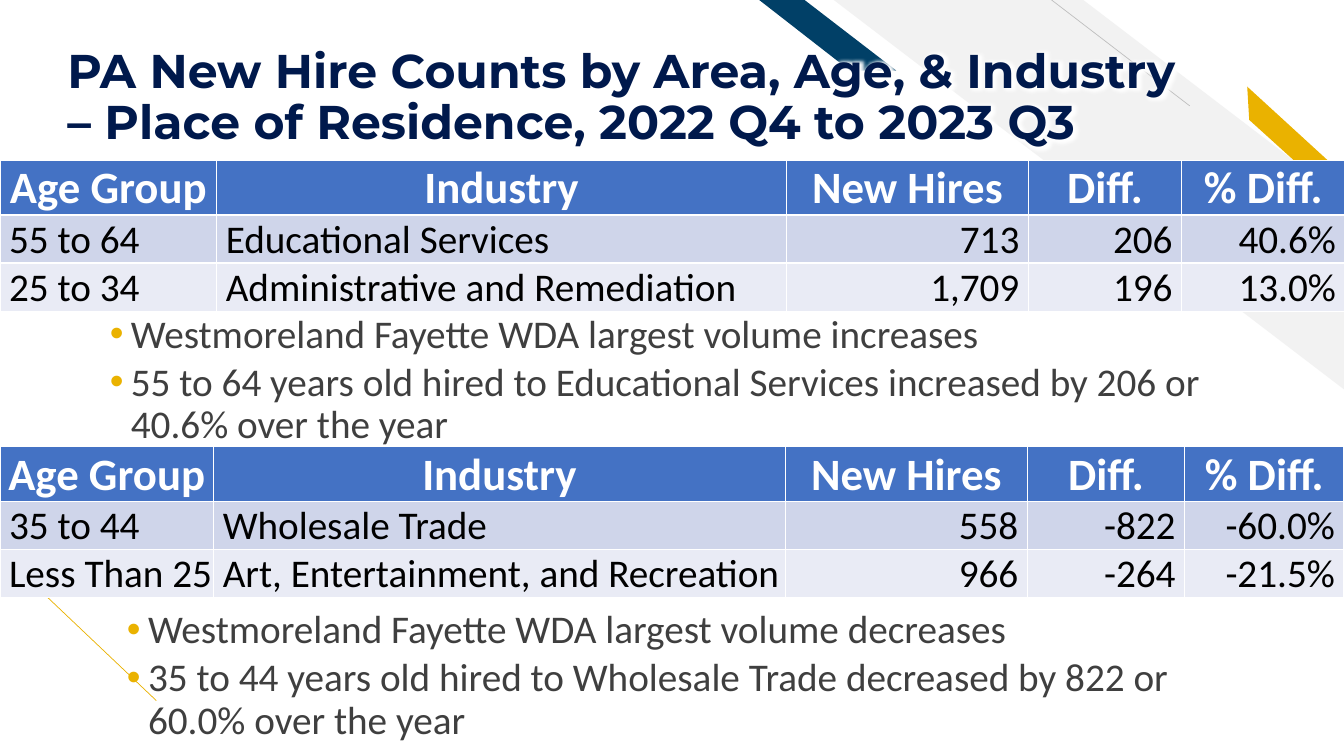
from dataclasses import dataclass

from lxml.etree import SubElement
from pptx import Presentation
from pptx.dml.color import RGBColor
from pptx.enum.shapes import MSO_CONNECTOR, MSO_SHAPE
from pptx.enum.text import MSO_ANCHOR, PP_ALIGN
from pptx.oxml.ns import qn
from pptx.util import Inches, Pt


@dataclass(frozen=True)
class Theme:
    """Colours, fonts and type sizes of the slide."""
    navy: str = "00194C"
    blue: str = "014067"
    gold: str = "EAB200"
    pale: str = "F2F2F2"
    grey: str = "BFBFBF"
    body: str = "3F3F3F"
    white: str = "FFFFFF"
    black: str = "000000"
    header: str = "4472C4"
    bands: tuple = ("CFD5EA", "E9EBF5")
    title_font: str = "Montserrat"
    body_font: str = "Calibri"
    title_size: float = 33.8
    header_size: float = 32
    body_size: float = 28


THEME = Theme()
HEADINGS = ("Age Group", "Industry", "New Hires", "Diff.", "% Diff.")
ROW_HEIGHTS = (0.47, 0.42, 0.43)


def rgb(color):
    """Turn a hex string into a colour."""
    return RGBColor.from_string(color)


def style_font(font, name, size, color, bold=False):
    """Set the typeface, size, colour and weight of a font."""
    font.name, font.size, font.bold = name, Pt(size), bold
    font.color.rgb = rgb(color)


def set_margins(target, left, top, right, bottom):
    """Set the inner margins of a cell or text frame."""
    target.margin_left, target.margin_top = Inches(left), Inches(top)
    target.margin_right, target.margin_bottom = Inches(right), Inches(bottom)


def paint(shape, color):
    """Give a shape a plain fill without line or shadow."""
    shape.shadow.inherit = False
    shape.fill.solid()
    shape.fill.fore_color.rgb = rgb(color)
    shape.line.fill.background()


def add_polygon(slide, left, top, points, color):
    """Draw a filled outline from points relative to its corner."""
    corners = [(Inches(left + x), Inches(top + y)) for x, y in points]
    builder = slide.shapes.build_freeform(*corners[0], scale=1.0)
    builder.add_line_segments(corners[1:], close=True)
    paint(builder.convert_to_shape(), color)


def add_hairline(slide, start, end, color):
    """Draw a thin straight line."""
    line = slide.shapes.add_connector(
        MSO_CONNECTOR.STRAIGHT, *map(Inches, start + end))
    line.line.color.rgb = rgb(color)
    line.line.width = Pt(0.5)
    SubElement(line._element.spPr, qn("a:effectLst"))


def add_corner_decoration(slide, left, top, width, height):
    """Place the diagonal bands of the upper right corner."""
    stripe = slide.shapes.add_shape(
        MSO_SHAPE.DIAGONAL_STRIPE, *map(Inches, (left, top, width, height)))
    stripe.adjustments[0] = 0.512
    stripe._element.spPr.xfrm.set("flipH", "1")
    paint(stripe, THEME.pale)
    add_hairline(slide, (left + 3.53, top + 1.05), (left + 2.16, top), THEME.grey)
    add_polygon(slide, left + 4.1, top + 0.86,
                ((0.98, 1.2), (0.95, 0.87), (0, 0), (0.02, 0.33)), THEME.gold)
    add_polygon(slide, left - 0.74, top,
                ((1.36, 0.7), (0.45, 0), (0, 0), (0.9, 0.7)), THEME.blue)


def add_text_frame(slide, left, top, width, height):
    """Add a wrapping text box and return its text frame."""
    box = slide.shapes.add_textbox(*map(Inches, (left, top, width, height)))
    box.text_frame.word_wrap = True
    return box.text_frame


def add_title(slide, left, top, width, height, text):
    """Place the title with a soft white glow behind its letters."""
    frame = add_text_frame(slide, left, top, width, height)
    set_margins(frame, 0.1, 0.05, 0.1, 0)
    frame.vertical_anchor = MSO_ANCHOR.BOTTOM
    frame.text = text
    paragraph = frame.paragraphs[0]
    paragraph.line_spacing = 0.9
    for run in paragraph.runs:
        style_font(run.font, THEME.title_font, THEME.title_size, THEME.navy, True)
        effects = run._r.get_or_add_rPr().find(qn("a:solidFill"))
        effects.addnext(effects.makeelement(qn("a:effectLst"), {}))
        glow = SubElement(effects.getnext(), qn("a:glow"), rad=str(Inches(0.14)))
        SubElement(glow, qn("a:srgbClr"), val=THEME.white)


def add_bullets(slide, left, top, width, height, lines):
    """Place a list with gold bullets."""
    frame = add_text_frame(slide, left, top, width, height)
    for index, line in enumerate(lines):
        paragraph = frame.add_paragraph() if index else frame.paragraphs[0]
        paragraph.text = line
        paragraph.level = 1
        paragraph.line_spacing = 0.9
        paragraph.space_before = Pt(4.2 if index else 0)
        properties = paragraph._p.get_or_add_pPr()
        properties.set("marL", str(Inches(0.63)))
        properties.set("indent", str(Inches(-0.21)))
        bullet_color = SubElement(properties, qn("a:buClr"))
        SubElement(bullet_color, qn("a:srgbClr"), val=THEME.gold)
        SubElement(properties, qn("a:buFont"), typeface="Arial")
        SubElement(properties, qn("a:buChar"), char="•")
        for run in paragraph.runs:
            style_font(run.font, THEME.body_font, THEME.body_size, THEME.body)


def add_borders(cell, top, bottom):
    """Draw white borders around a cell."""
    properties = cell._tc.get_or_add_tcPr()
    for side, width in (("L", 1), ("R", 1), ("T", top), ("B", bottom)):
        line = SubElement(properties, qn(f"a:ln{side}"), w=str(Pt(width)))
        fill = SubElement(line, qn("a:solidFill"))
        SubElement(fill, qn("a:srgbClr"), val=THEME.white)


def fill_cell(cell, text, row, column):
    """Write and style one cell by its place in the table."""
    is_header, is_label = row == 0, column < 2
    cell.text = text
    cell.vertical_anchor = MSO_ANCHOR.MIDDLE
    paragraph = cell.text_frame.paragraphs[0]
    if is_header:
        paragraph.alignment = PP_ALIGN.CENTER
        set_margins(cell, 0.01, 0.01, 0.01, 0)
    elif is_label:
        paragraph.alignment = PP_ALIGN.LEFT
        set_margins(cell, 0.09, 0.01, 0.01, 0)
    else:
        paragraph.alignment = PP_ALIGN.RIGHT
        set_margins(cell, 0.01, 0.01, 0.09, 0)
    style_font(paragraph.runs[0].font, THEME.body_font,
               THEME.header_size if is_header else THEME.body_size,
               THEME.white if is_header else THEME.black, is_header)
    add_borders(cell, 1.5 if row == 2 else 1, 1.5 if row == 1 else 1)
    cell.fill.solid()
    cell.fill.fore_color.rgb = rgb(THEME.header if is_header else THEME.bands[row - 1])


def add_hires_table(slide, left, top, width, height, columns, records):
    """Place a table of new hires under the shared headings."""
    rows = (HEADINGS, *records)
    table = slide.shapes.add_table(
        len(rows), len(columns), *map(Inches, (left, top, width, height))).table
    for column, column_width in zip(table.columns, columns):
        column.width = Inches(column_width)
    for row, row_height in zip(table.rows, ROW_HEIGHTS):
        row.height = Inches(row_height)
    for row, values in enumerate(rows):
        for column, text in enumerate(values):
            fill_cell(table.cell(row, column), text, row, column)


def main():
    """Build the slide and save it."""
    presentation = Presentation()
    presentation.slide_width, presentation.slide_height = Inches(13.33), Inches(7.5)
    slide = presentation.slides.add_slide(presentation.slide_layouts[6])
    add_corner_decoration(slide, 8.27, 0, 5.07, 3.87)
    add_hairline(slide, (1.55, 6.95), (-0.02, 5.46), THEME.gold)
    add_title(slide, 0.57, 0.23, 12.31, 1.26,
              "PA New Hire Counts by Area, Age, & Industry\v"
              "– Place of Residence, 2022 Q4 to 2023 Q3")
    add_hires_table(slide, 0, 1.59, 13.33, 1.5, (2.15, 5.65, 2.4, 1.52, 1.62), (
        ("55 to 64", "Educational Services", "713", "206", "40.6%"),
        ("25 to 34", "Administrative and Remediation", "1,709", "196", "13.0%")))
    add_bullets(slide, 0.57, 3.07, 11.85, 1.5, (
        "Westmoreland Fayette WDA largest volume increases",
        "55 to 64 years old hired to Educational Services increased by 206 or "
        "40.6% over the year"))
    add_hires_table(slide, 0, 4.43, 13.33, 1.5, (2.12, 5.67, 2.4, 1.56, 1.58), (
        ("35 to 44", "Wholesale Trade", "558", "-822", "-60.0%"),
        ("Less Than 25", "Art, Entertainment, and Recreation", "966", "-264", "-21.5%")))
    add_bullets(slide, 0.74, 6, 11.85, 1.5, (
        "Westmoreland Fayette WDA largest volume decreases",
        "35 to 44 years old hired to Wholesale Trade decreased by 822 or "
        "60.0% over the year"))
    presentation.save("out.pptx")


if __name__ == "__main__":
    main()
